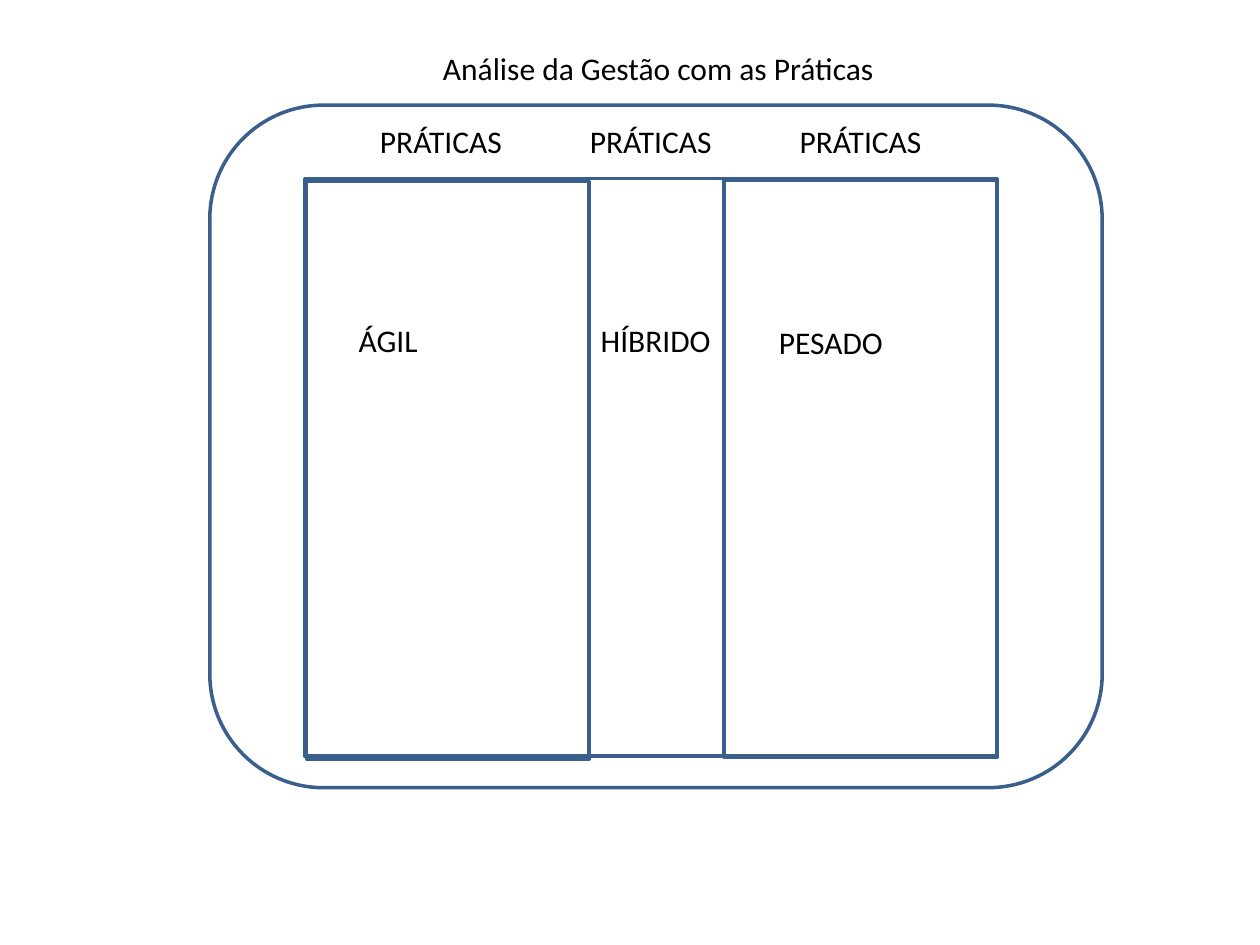
from pptx import Presentation
from pptx.dml.color import RGBColor
from pptx.enum.shapes import MSO_SHAPE as Shape
from pptx.enum.text import MSO_ANCHOR as Anchor, MSO_AUTO_SIZE as AutoSize, PP_ALIGN as Align
from pptx.util import Cm, Pt


def color(value):
    return RGBColor.from_string(value)


class SlideBuilder:
    LINE = "3A5F8C"
    FONT = {"name": "Calibri", "size": Pt(18), "bold": False}
    FRAME = {
        "word_wrap": True,
        "auto_size": AutoSize.SHAPE_TO_FIT_TEXT,
        "vertical_anchor": Anchor.TOP,
        "margin_left": Cm(0.25),
        "margin_right": Cm(0.25),
        "margin_top": Cm(0.13),
        "margin_bottom": Cm(0.13),
    }

    def __init__(self, page):
        self.page = page

    def fill_text(self, box, text):
        frame = box.text_frame
        for name, value in self.FRAME.items():
            setattr(frame, name, value)
        para = frame.paragraphs[0]
        para.alignment = Align.LEFT
        para.line_spacing = 1.0
        para.space_before = Pt(0)
        span = para.add_run()
        span.text = text
        for name, value in self.FONT.items():
            setattr(span.font, name, value)
        span.font.color.rgb = color("000000")

    def title(self, text, left, top, width, height):
        box = self.page.shapes.title
        place = {"left": left, "top": top, "width": width, "height": height}
        for name, value in place.items():
            setattr(box, name, Cm(value))
        self.fill_text(box, text)

    def label(self, text, left, top, width=2.96, height=1.02):
        box = self.page.shapes.add_textbox(Cm(left), Cm(top), Cm(width), Cm(height))
        self.fill_text(box, text)

    def outline(self, kind, left, top, width, height):
        shape = self.page.shapes.add_shape(kind, Cm(left), Cm(top), Cm(width), Cm(height))
        shape.shadow.inherit = False
        shape.fill.background()
        shape.line.color.rgb = color(self.LINE)
        shape.line.width = Pt(2)


def main():
    deck = Presentation()
    deck.slide_width, deck.slide_height = Cm(25.4), Cm(19.05)
    builder = SlideBuilder(deck.slides.add_slide(deck.slide_layouts[5]))

    builder.title("Análise da Gestão com as Práticas", 8.68, 0.85, 9.74, 1.02)

    # Whole management area, then its agile and heavy sides
    panel_height = 11.64
    for left, top, width in ((6.14, 3.6, 13.97), (6.18, 3.66, 5.7), (14.6, 3.63, 5.5)):
        builder.outline(Shape.RECTANGLE, left, top, width, panel_height)

    # Name of each approach
    for text, left, top in (("ÁGIL", 6.98, 6.35), ("PESADO", 15.45, 6.39), ("HÍBRIDO", 11.86, 6.35)):
        builder.label(text, left, top)

    # Practices heading over each approach
    for column in range(3):
        builder.label("PRÁTICAS", 7.41 + column * 4.23, 2.33)

    # Surrounding frame
    builder.outline(Shape.ROUNDED_RECTANGLE, 4.23, 2.12, 17.99, 13.76)

    deck.save("out.pptx")


if __name__ == "__main__":
    main()
